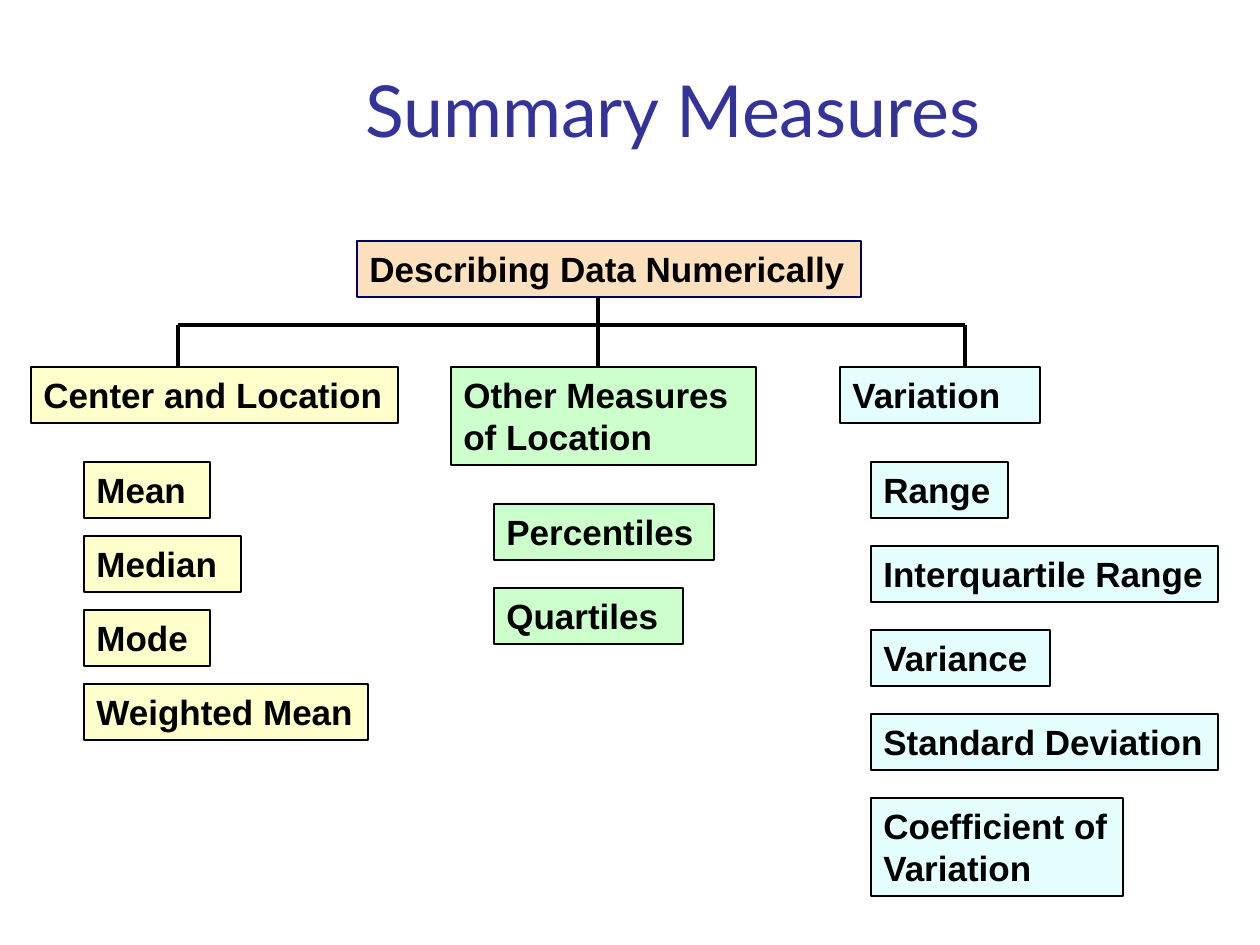
"""Builds the Summary Measures slide: a tree of numerical descriptions of data."""
from lxml import etree
from pptx import Presentation
from pptx.dml.color import RGBColor
from pptx.enum.shapes import MSO_CONNECTOR, MSO_SHAPE
from pptx.enum.text import MSO_ANCHOR, MSO_AUTO_SIZE, PP_ALIGN
from pptx.oxml.ns import qn
from pptx.util import Emu, Pt

RECTANGLE = MSO_SHAPE.RECTANGLE
STRAIGHT = MSO_CONNECTOR.STRAIGHT
LEFT, CENTER = PP_ALIGN.LEFT, PP_ALIGN.CENTER
TOP, BOTTOM = MSO_ANCHOR.TOP, MSO_ANCHOR.BOTTOM
GROW = MSO_AUTO_SIZE.SHAPE_TO_FIT_TEXT

EMU_PER_PX = 914400 / 126
COLORS = {
    "title": "333399",
    "black": "000000",
    "navy": "000066",
    "peach": "FDE0BD",
    "yellow": "FFFFCC",
    "green": "CCFFCC",
    "cyan": "E5FFFF",
}
ROW_HEIGHT, TWO_ROW_HEIGHT = 56, 98
BAR_Y = 325

BRANCHES = [
    {
        "fill": "yellow",
        "heading": ("Center and Location", 31, 367, 367, ROW_HEIGHT),
        "left": 84, "top": 462, "pitch": 74,
        "measures": [
            ("Mean", 126, ROW_HEIGHT),
            ("Median", 157, ROW_HEIGHT),
            ("Mode", 126, ROW_HEIGHT),
            ("Weighted Mean", 284, ROW_HEIGHT),
        ],
    },
    {
        "fill": "green",
        "heading": ("Other Measures of Location", 451, 367, 305, TWO_ROW_HEIGHT),
        "left": 494, "top": 504, "pitch": 84,
        "measures": [
            ("Percentiles", 220, ROW_HEIGHT),
            ("Quartiles", 189, ROW_HEIGHT),
        ],
    },
    {
        "fill": "cyan",
        "heading": ("Variation", 840, 367, 200, ROW_HEIGHT),
        "left": 871, "top": 462, "pitch": 84,
        "measures": [
            ("Range", 137, ROW_HEIGHT),
            ("Interquartile Range", 347, ROW_HEIGHT),
            ("Variance", 179, ROW_HEIGHT),
            ("Standard Deviation", 347, ROW_HEIGHT),
            ("Coefficient of Variation", 252, TWO_ROW_HEIGHT),
        ],
    },
]


def px(length):
    """Turn pixels into EMU."""
    return Emu(round(length * EMU_PER_PX))


def color(name):
    """Look up a named colour."""
    return RGBColor.from_string(COLORS[name])


def write_text(shape, text, font_name, size, color_name, align, anchor):
    """Put one formatted paragraph in a shape."""
    text_frame = shape.text_frame
    text_frame.word_wrap = True
    text_frame.vertical_anchor = anchor
    text_frame.text = text
    paragraph = text_frame.paragraphs[0]
    paragraph.alignment = align
    font = paragraph.runs[0].font
    font.name = font_name
    font.size = Pt(size)
    font.color.rgb = color(color_name)
    return paragraph


def add_title(slide, text):
    """Add the slide title."""
    shape = slide.shapes.add_textbox(px(136), px(53), px(1074), px(105))
    paragraph = write_text(shape, text, "Lato", 41, "title", CENTER, BOTTOM)
    paragraph.line_spacing = 1.1


def add_box(slide, text, left, top, width, height, fill, outline="black"):
    """Add a filled, outlined box with a bold label."""
    shape = slide.shapes.add_shape(RECTANGLE, px(left), px(top), px(width), px(height))
    shape.shadow.inherit = False
    shape.fill.solid()
    shape.fill.fore_color.rgb = color(fill)
    shape.line.color.rgb = color(outline)
    shape.line.width = Pt(1)
    paragraph = write_text(shape, text, "Arial", 20, "black", LEFT, TOP)
    paragraph.runs[0].font.bold = True
    shape.text_frame.auto_size = GROW


def add_line(slide, start_x, start_y, end_x, end_y):
    """Add one straight line of the tree."""
    line = slide.shapes.add_connector(
        STRAIGHT, px(start_x), px(start_y), px(end_x), px(end_y))
    line.line.color.rgb = color("black")
    line.line.width = Pt(2.25)
    etree.SubElement(line._element.spPr, qn("a:effectLst"))


def add_tree_lines(slide):
    """Add the crossbar and the stems that run down behind the boxes."""
    left_x, middle_x, right_x = 178, 598, 965
    add_line(slide, left_x, BAR_Y, right_x, BAR_Y)
    add_line(slide, left_x, BAR_Y, left_x, 398)
    add_line(slide, middle_x, 284, middle_x, 436)
    add_line(slide, right_x, BAR_Y, right_x, 391)


def add_branch(slide, branch):
    """Add a heading box and its evenly spaced measures."""
    fill = branch["fill"]
    add_box(slide, *branch["heading"], fill)
    for index, (text, width, height) in enumerate(branch["measures"]):
        top = branch["top"] + index * branch["pitch"]
        add_box(slide, text, branch["left"], top, width, height, fill)


def main():
    """Build and save the slide."""
    presentation = Presentation()
    presentation.slide_width = px(1260)
    presentation.slide_height = px(945)
    slide = presentation.slides.add_slide(presentation.slide_layouts[6])
    add_title(slide, "Summary Measures")
    add_tree_lines(slide)
    add_box(slide, "Describing Data Numerically", 357, 241, 504, ROW_HEIGHT,
            "peach", "navy")
    for branch in BRANCHES:
        add_branch(slide, branch)
    presentation.save("out.pptx")


if __name__ == "__main__":
    main()
